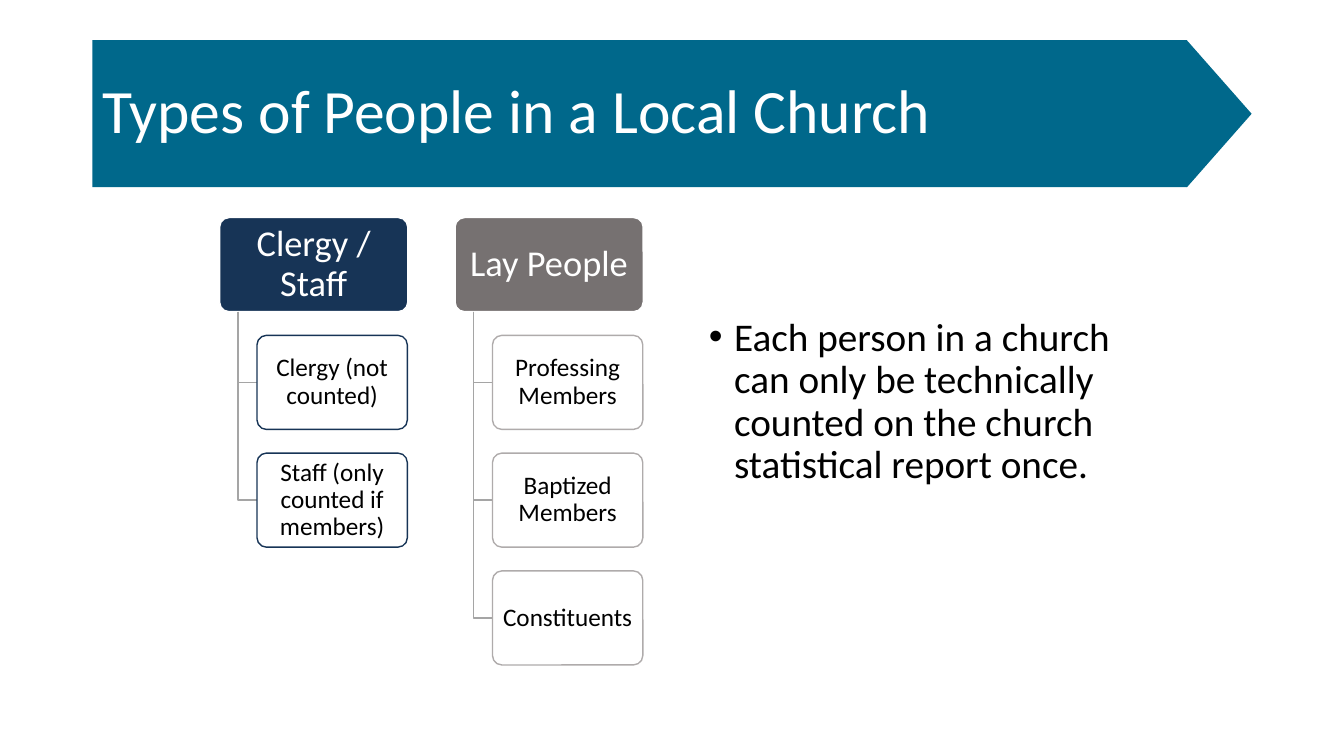
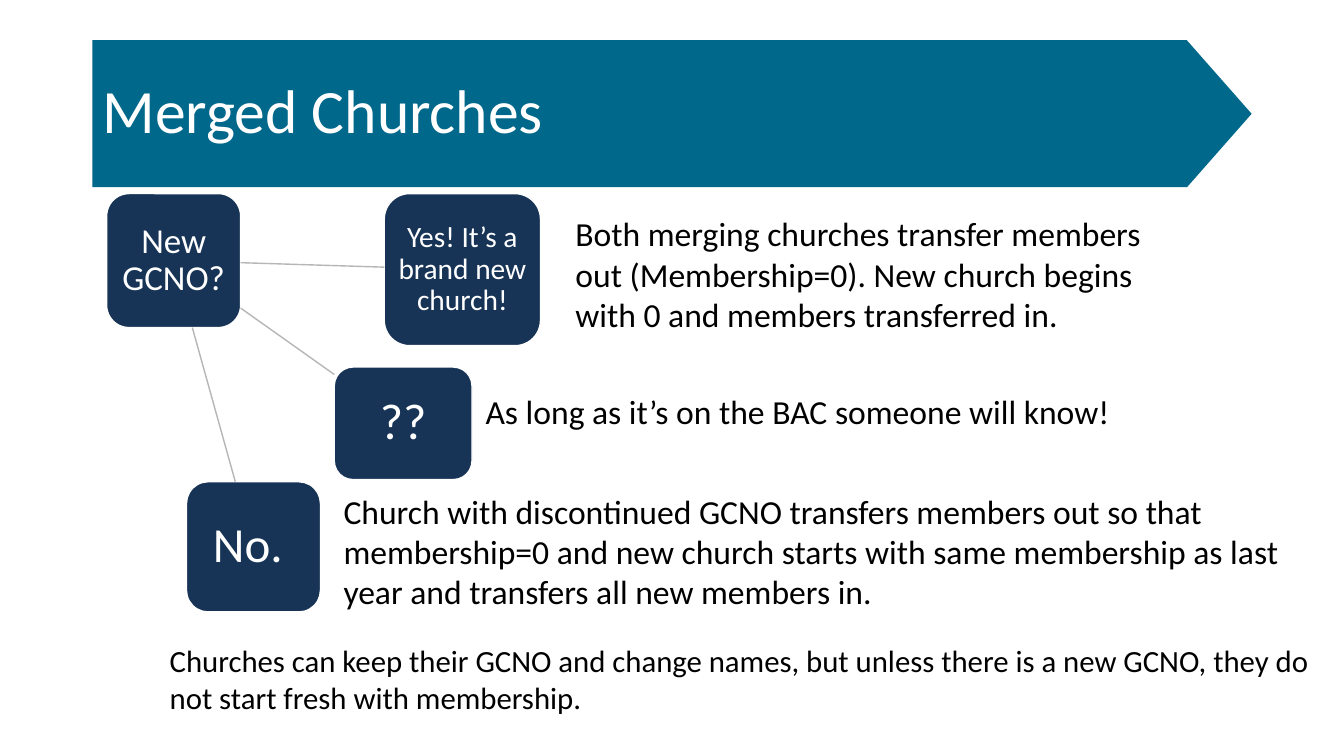
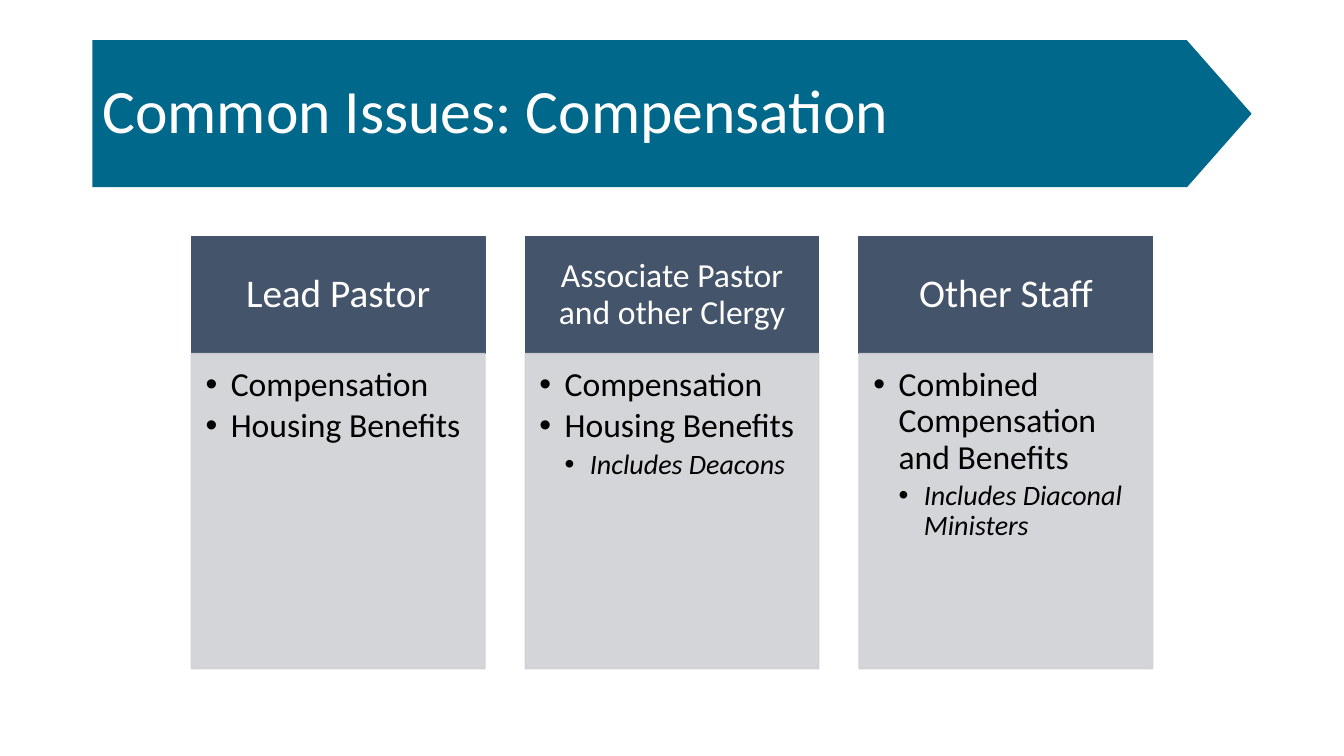
from dataclasses import dataclass
from lxml.etree import SubElement
from pptx import Presentation
from pptx.dml.color import RGBColor as RGB
from pptx.enum.shapes import MSO_CONNECTOR as LINK, MSO_SHAPE as SHAPE
from pptx.enum.text import MSO_ANCHOR as ANCHOR, PP_ALIGN as ALIGN
from pptx.oxml.ns import qn
from pptx.util import Inches, Pt


@dataclass(frozen=True)
class Theme:
    font: str = "Calibri"
    band: str = "00688B"
    navy: str = "173456"
    grey: str = "767171"
    slate: str = "44546A"
    pale: str = "CFD1D4"
    silver: str = "AFABAB"
    branch: str = "A5A5A5"
    spoke: str = "B6B6B6"
    white: str = "FFFFFF"
    black: str = "000000"
    title: int = 44
    lead: int = 28
    head: int = 26
    text: int = 24
    note: int = 22
    sub: int = 20
    leaf: int = 18


theme = Theme()
deck = Presentation()
deck.slide_width, deck.slide_height = Inches(13.33), Inches(7.5)
COLUMNS, ROWS = 160, 90
col, row = deck.slide_width / COLUMNS, deck.slide_height / ROWS


def panel(slide, kind, box, lines=(), fill=None, line=None, color=theme.white, corner=None,
          alpha=None, inset=(1.2, 0.6, 1.2, 0.6), align=ALIGN.CENTER, anchor=ANCHOR.MIDDLE,
          spacing=0.9):
    x, y, w, h = box
    place = [int(v) for v in (x * col, y * row, w * col, h * row)]
    if kind is None:
        item = slide.shapes.add_textbox(*place)
    else:
        item = slide.shapes.add_shape(kind, *place)
        item.shadow.inherit = False
        item.fill.solid()
        item.fill.fore_color.rgb = RGB.from_string(fill)
        if line:
            item.line.color.rgb = RGB.from_string(line)
            item.line.width = Pt(1)
        else:
            item.line.fill.background()
        if corner:
            item.adjustments[0] = corner
        if alpha:
            for tint in list(item._element.spPr.iter(qn("a:srgbClr")))[:2 if line == fill else 1]:
                SubElement(tint, qn("a:alpha"), val=str(alpha * 1000))
    frame = item.text_frame
    sides = ("margin_left", "margin_top", "margin_right", "margin_bottom")
    layout = dict(zip(sides, (int(v * col) for v in inset)), word_wrap=True, vertical_anchor=anchor)
    for key, value in layout.items():
        setattr(frame, key, value)
    for number, (words, size, level) in enumerate(lines):
        para = frame.add_paragraph() if number else frame.paragraphs[0]
        if level:
            props = para._p.get_or_add_pPr()
            props.set("marL", str(Inches(0.25 * level)))
            props.set("indent", str(Inches(-0.25)))
            SubElement(props, qn("a:buFont"), typeface="Arial")
            SubElement(props, qn("a:buChar"), char="•")
        para.alignment, para.line_spacing = align, spacing
        if len(lines) > 1:
            para.space_after = Pt(3.6)
        run = para.add_run()
        run.text = words
        look = dict(name=theme.font, size=Pt(size), italic=True if level == 2 else None)
        for key, value in look.items():
            setattr(run.font, key, value)
        run.font.color.rgb = RGB.from_string(color)
    return item


pages = []
for heading in ("Types of People in a Local Church", "Merged Churches", "Common Issues: Compensation"):
    page = deck.slides.add_slide(deck.slide_layouts[6])
    panel(page, SHAPE.RECTANGLE, (11, 4.78, 130.3, 17.5), [(heading, theme.title, 0)],
          theme.band, align=ALIGN.LEFT)
    panel(page, SHAPE.ISOSCELES_TRIANGLE, (136.4, 9.7, 17.5, 7.7), fill=theme.band).rotation = 90
    pages.append(page)
people, merged, compensation = pages

group_left, group_top, group_step, tier = 26.15, 25.9, 28.03, 14.02
group_w, group_h, leaf_w = 22.4, 11.2, 17.9
groups = [
    ("Clergy / Staff", theme.navy, theme.navy,
     ["Clergy (not counted)", "Staff (only counted if members)"]),
    ("Lay People", theme.grey, theme.silver,
     ["Professing Members", "Baptized Members", "Constituents"]),
]
for place, (group, fill, outline, kinds) in enumerate(groups):
    left = group_left + place * group_step
    spine, leaf_left, group_bottom = left + 2.2, left + 4.45, group_top + group_h
    panel(people, SHAPE.ROUNDED_RECTANGLE, (left, group_top, group_w, group_h),
          [(group, theme.head, 0)], fill, theme.white, corner=0.1, inset=(0.6, 0.5, 0.6, 0.5))
    for depth, kind in enumerate(kinds, 1):
        top = group_top + depth * tier
        middle = top + group_h / 2
        bend = people.shapes.build_freeform(int(spine * col), int(group_bottom * row))
        bend.add_line_segments([(int(x * col), int(middle * row)) for x in (spine, leaf_left)],
                               close=False)
        branch = bend.convert_to_shape()
        branch.shadow.inherit = False
        branch.fill.background()
        branch.line.color.rgb = RGB.from_string(theme.branch)
        branch.line.width = Pt(1)
        panel(people, SHAPE.ROUNDED_RECTANGLE, (leaf_left, top, leaf_w, group_h),
              [(kind, theme.leaf, 0)], theme.white, outline, theme.black, 0.1, 90,
              (0.5, 0.4, 0.5, 0.4))
panel(people, None, (83.2, 37.2, 50.3, 21.8),
      [("Each person in a church can only be technically counted on the church statistical report once.",
        theme.lead, 1)],
      color=theme.black, align=ALIGN.LEFT, anchor=ANCHOR.TOP)

question = (12.7, 23.05, 15.95, 15.95)
choices = [
    ("New GCNO?", 25, question, 0.8),
    ("??", 36, (39.8, 43.7, 16.4, 13.4), 1.2),
    ("Yes! It’s a brand new church!", 21, (45.75, 23.05, 18.6, 18.1), 0.7),
    ("No. ", 35, (22.2, 57.35, 15.95, 15.5), 1.2),
]
for choice, size, box, pad in choices:
    panel(merged, SHAPE.ROUNDED_RECTANGLE, box, [(choice, size, 0)], theme.navy, theme.white,
          inset=(pad,) * 4)
    if box == question:
        continue
    (x1, y1), (x2, y2) = [(x + w / 2, y + h / 2) for x, y, w, h in (question, box)]
    dx, dy = x2 - x1, y2 - y1
    leave, arrive = [min(w / 2 / abs(dx), h / 2 / abs(dy)) for x, y, w, h in (question, box)]
    ends = [int(v) for share in (leave, 1 - arrive)
            for v in ((x1 + share * dx) * col, (y1 + share * dy) * row)]
    spoke = merged.shapes.add_connector(LINK.STRAIGHT, *ends)
    spoke.line.color.rgb = RGB.from_string(theme.spoke)
    spoke.line.width = Pt(1)
    SubElement(spoke._element.spPr, qn("a:effectLst"))
answers = [
    ("Both merging churches transfer members out (Membership=0). New church begins with 0 and "
     "members transferred in.", theme.text, (67.3, 24.8, 74.3, 15.7), 1.2),
    ("As long as it’s on the BAC someone will know!", theme.text, (56.6, 45.9, 85, 6), 1.2),
    ("Church with discontinued GCNO transfers members out so that membership=0 and new church "
     "starts with same membership as last year and transfers all new members in.",
     theme.text, (33.7, 57.8, 120.2, 15.7), 7.2),
    ("Churches can keep their GCNO and change names, but unless there is a new GCNO, they do not "
     "start fresh with membership.", theme.note, (19, 75.8, 141, 10.1), 1.2),
]
for answer, size, box, indent in answers:
    panel(merged, None, box, [(answer, size, 0)], color=theme.black, align=ALIGN.LEFT,
          anchor=ANCHOR.TOP, inset=(indent, 0.6, 1.2, 0.6), spacing=1)

role_left, role_top, role_w, role_gap = 22.78, 28.15, 34.95, 4.8
role_h, benefits_h = 13.95, 37.5
shared = [("Compensation", theme.text, 1), ("Housing Benefits", theme.text, 1)]
roles = [
    ("Lead Pastor", theme.lead, shared),
    ("Associate Pastor and other Clergy", theme.text, shared + [("Includes Deacons", theme.sub, 2)]),
    ("Other Staff", theme.lead, [("Combined Compensation and Benefits", theme.text, 1),
                                 ("Includes Diaconal Ministers", theme.sub, 2)]),
]
for place, (role, size, benefits) in enumerate(roles):
    left = role_left + place * (role_w + role_gap)
    panel(compensation, SHAPE.RECTANGLE, (left, role_top, role_w, role_h), [(role, size, 0)],
          theme.slate, theme.slate, inset=(2.4, 1.4, 2.4, 1.4))
    panel(compensation, SHAPE.RECTANGLE, (left, role_top + role_h, role_w, benefits_h), benefits,
          theme.pale, theme.pale, theme.black, alpha=90, inset=(1.7, 1.65, 2.3, 2.5),
          align=ALIGN.LEFT, anchor=ANCHOR.TOP)

deck.save("out.pptx")
